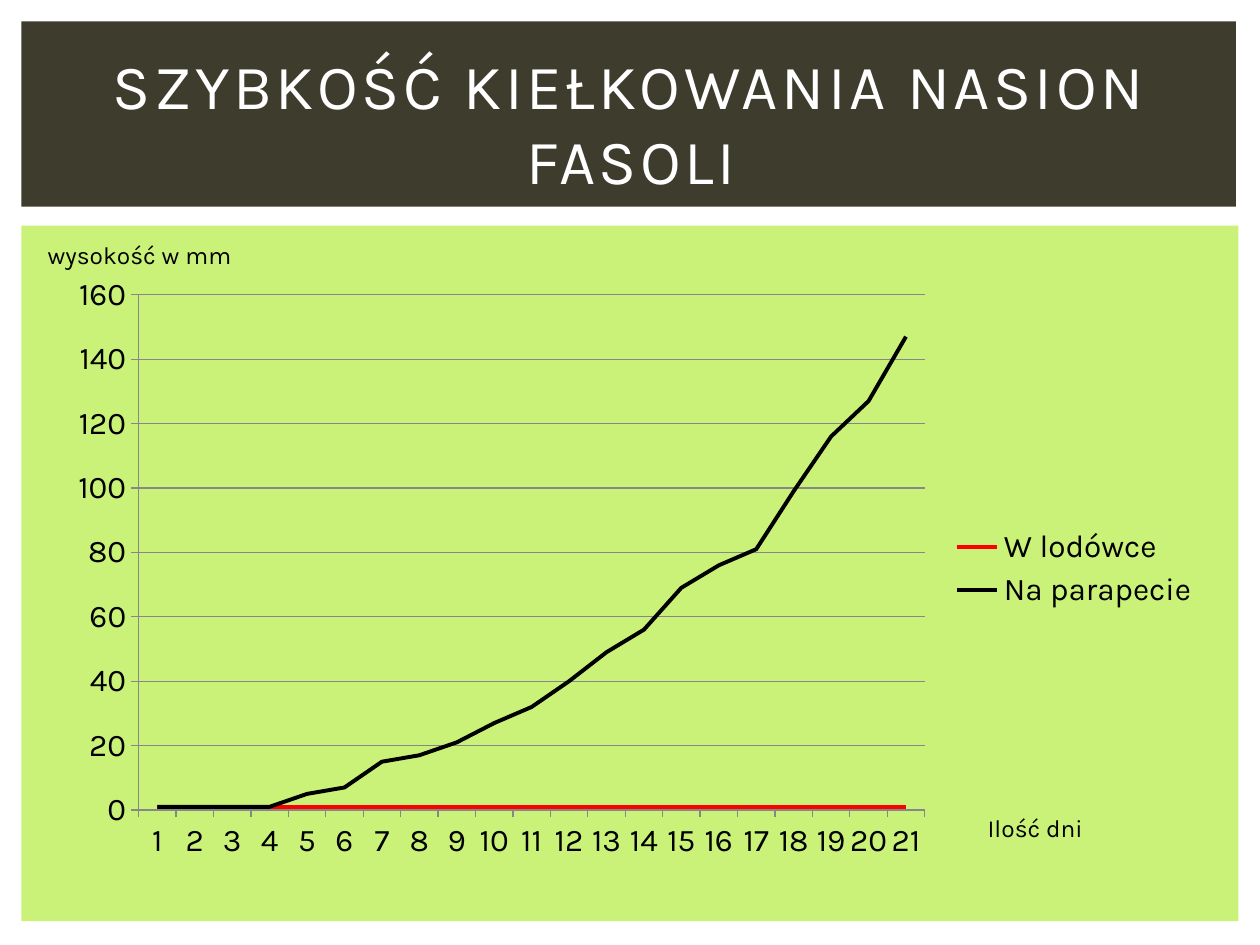
from pptx import Presentation
from pptx.chart.data import CategoryChartData
from pptx.dml.color import RGBColor
from pptx.enum.chart import XL_CHART_TYPE, XL_LEGEND_POSITION, XL_MARKER_STYLE, XL_TICK_MARK
from pptx.enum.shapes import MSO_SHAPE
from pptx.enum.text import MSO_ANCHOR, PP_ALIGN
from pptx.oxml import parse_xml
from pptx.oxml.ns import nsdecls
from pptx.util import Inches, Pt

RECTANGLE = MSO_SHAPE.RECTANGLE
LINE = XL_CHART_TYPE.LINE
RIGHT = XL_LEGEND_POSITION.RIGHT
NO_MARKER = XL_MARKER_STYLE.NONE
OUTSIDE = XL_TICK_MARK.OUTSIDE
NO_TICK = XL_TICK_MARK.NONE
LEFT, CENTER = PP_ALIGN.LEFT, PP_ALIGN.CENTER
TOP, MIDDLE = MSO_ANCHOR.TOP, MSO_ANCHOR.MIDDLE

FONT = "Karla"
COLORS = {
    "panel": "CAF278",
    "banner": "3E3D2D",
    "title": "FFFFFF",
    "text": "000000",
    "axis": "878787",
    "fridge": "FF0000",
    "windowsill": "000000",
}

TITLE = "SZYBKOŚĆ KIEŁKOWANIA NASION FASOLI"
AXIS_LABELS = [
    ("wysokość w mm", (0.28, 1.86, 1.73, 0.34)),
    ("Ilość dni", (7.74, 6.4, 1.18, 0.34)),
]
BACKGROUNDS = [
    ("panel", (0.17, 1.79, 9.66, 5.52)),
    ("banner", (0.17, 0.17, 9.64, 1.47)),
]
DAYS = 21
SERIES = [
    ("W lodówce", "fridge", [1] * DAYS),
    ("Na parapecie", "windowsill",
     [1, 1, 1, 1, 5, 7, 15, 17, 21, 27, 32, 40, 49, 56, 69, 76, 81, 99, 116, 127, 147]),
]
CHART_BOX = (0.43, 2.1, 9.19, 4.82)
PLOT_BOX = (1.1, 2.34, 6.24, 4.09)


def color(name):
    return RGBColor.from_string(COLORS[name])


def inches(box):
    return [Inches(length) for length in box]


def add_text(slide, text, box, size=14, fill="text", align=LEFT, anchor=TOP, wrap=True, spacing=0):
    frame = slide.shapes.add_textbox(*inches(box)).text_frame
    frame.word_wrap = wrap
    frame.vertical_anchor = anchor
    paragraph = frame.paragraphs[0]
    paragraph.alignment = align
    run = paragraph.add_run()
    run.text = text
    run.font.name = FONT
    run.font.size = Pt(size)
    run.font.color.rgb = color(fill)
    if spacing:
        run.font._element.set("spc", str(spacing * 100))


def add_background(slide, fill, box):
    shape = slide.shapes.add_shape(RECTANGLE, *inches(box))
    shape.shadow.inherit = False
    shape.fill.solid()
    shape.fill.fore_color.rgb = color(fill)
    shape.line.fill.background()


def place_plot(chart):
    left, top, width, height = CHART_BOX
    plot_left, plot_top, plot_width, plot_height = PLOT_BOX
    fractions = {
        "x": (plot_left - left) / width,
        "y": (plot_top - top) / height,
        "w": plot_width / width,
        "h": plot_height / height,
    }
    values = "".join(f'<c:{key} val="{value:.4f}"/>' for key, value in fractions.items())
    layout = parse_xml(
        f'<c:layout {nsdecls("c")}><c:manualLayout><c:layoutTarget val="inner"/>'
        f'<c:xMode val="edge"/><c:yMode val="edge"/>{values}</c:manualLayout></c:layout>'
    )
    plot_area = chart._chartSpace.chart.plotArea
    for old_layout in plot_area.xpath("c:layout"):
        plot_area.remove(old_layout)
    plot_area.insert(0, layout)


def add_growth_chart(slide):
    data = CategoryChartData()
    data.categories = [str(day) for day in range(1, DAYS + 1)]
    for name, _, values in SERIES:
        data.add_series(name, values)
    chart = slide.shapes.add_chart(LINE, *inches(CHART_BOX), data).chart
    chart.has_title = False
    chart.font.name = FONT
    chart.font.size = Pt(18)
    chart.font.color.rgb = color("text")
    chart.has_legend = True
    chart.legend.position = RIGHT
    chart.legend.include_in_layout = False
    chart.plots[0].vary_by_categories = False

    for series, (_, fill, _) in zip(chart.plots[0].series, SERIES):
        series.smooth = False
        series.marker.style = NO_MARKER
        series.format.line.color.rgb = color(fill)
        series.format.line.width = Pt(2.25)

    chart.value_axis.minimum_scale = 0
    chart.value_axis.maximum_scale = 160
    chart.value_axis.major_unit = 20
    chart.value_axis.has_major_gridlines = True
    for axis in (chart.category_axis, chart.value_axis):
        axis.major_tick_mark = OUTSIDE
        axis.minor_tick_mark = NO_TICK
    for part in (chart.category_axis, chart.value_axis, chart.value_axis.major_gridlines):
        part.format.line.color.rgb = color("axis")
        part.format.line.width = Pt(0.75)
    place_plot(chart)


def main():
    presentation = Presentation()
    presentation.slide_width = Inches(10)
    presentation.slide_height = Inches(7.5)
    slide = presentation.slides.add_slide(presentation.slide_layouts[6])
    for fill, box in BACKGROUNDS:
        add_background(slide, fill, box)
    add_growth_chart(slide)
    add_text(slide, TITLE, (0.42, 0.39, 9.17, 1.15), size=36, fill="title",
             align=CENTER, anchor=MIDDLE, spacing=2)
    for text, box in AXIS_LABELS:
        add_text(slide, text, box, wrap=False)
    presentation.save("out.pptx")


if __name__ == "__main__":
    main()
